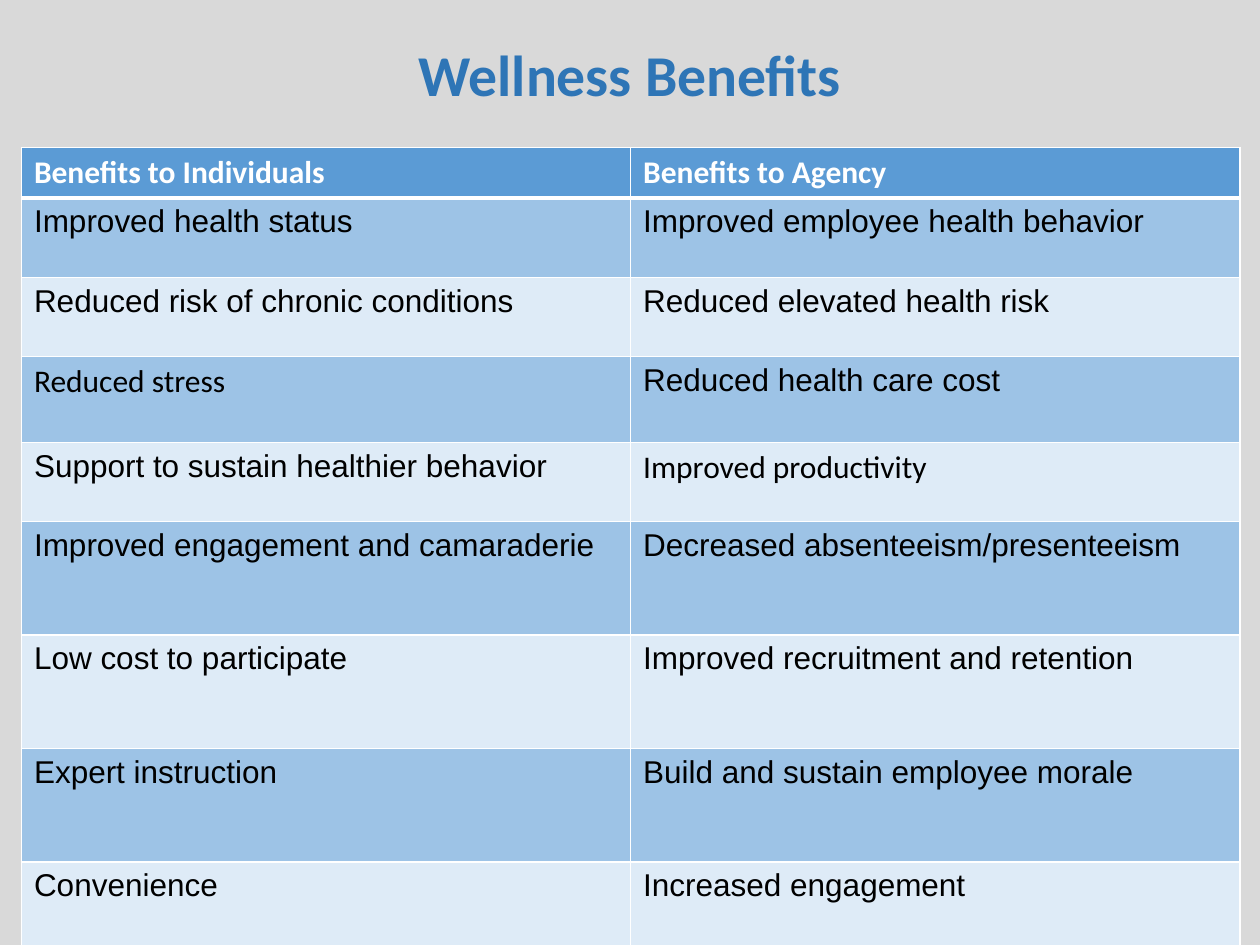
import lxml.etree
import pptx
import pptx.dml.color
import pptx.enum.text
import pptx.oxml.ns
import pptx.util

RGBColor = pptx.dml.color.RGBColor
GREY = RGBColor(0xD9, 0xD9, 0xD9)
TITLE_BLUE = RGBColor(0x2E, 0x75, 0xB6)
HEADER_BLUE = RGBColor(0x5B, 0x9B, 0xD5)
MID_BLUE = RGBColor(0x9D, 0xC3, 0xE6)
PALE_BLUE = RGBColor(0xDE, 0xEB, 0xF7)
WHITE = RGBColor(0xFF, 0xFF, 0xFF)
BLACK = RGBColor(0, 0, 0)

TITLE = {"name": "Calibri", "size": pptx.util.Pt(33), "bold": True}
HEADER = {"name": "Calibri", "size": pptx.util.Pt(18), "bold": True}
BODY = {"name": "Arial", "size": pptx.util.Pt(18), "bold": False}
CALIBRI_BODY = {**BODY, "name": "Calibri"}

BENEFITS = [
    ("Benefits to Individuals", "Benefits to Agency"),
    ("Improved health status", "Improved employee health behavior"),
    ("Reduced risk of chronic conditions", "Reduced elevated health risk"),
    ("Reduced stress", "Reduced health care cost"),
    ("Support to sustain healthier behavior", "Improved productivity"),
    ("Improved engagement and camaraderie", "Decreased absenteeism/presenteeism"),
    ("Low cost to participate", "Improved recruitment and retention"),
    ("Expert instruction", "Build and sustain employee morale"),
    ("Convenience", "Increased engagement"),
]
ROW_HEIGHTS = [0.4, 0.63, 0.63, 0.68, 0.63, 0.9, 0.9, 0.9, 0.72]
CALIBRI_ENTRIES = {"Reduced stress", "Improved productivity"}


class BenefitsPage:
    """Holds the style and the current slide, and adds each kind of element."""

    def __init__(self, deck):
        self.page = deck.slides.add_slide(deck.slide_layouts[6])
        fill = self.page.background.fill
        fill.solid()
        fill.fore_color.rgb = GREY

    def add_text(self, para, text, style, color):
        span = para.add_run()
        span.text = text
        for name, value in style.items():
            setattr(span.font, name, value)
        span.font.color.rgb = color

    def title(self, text, *place):
        box = self.page.shapes.add_textbox(*map(pptx.util.Inches, place))
        box.text_frame.word_wrap = True
        para = box.text_frame.paragraphs[0]
        para.alignment = pptx.enum.text.PP_ALIGN.CENTER
        para.line_spacing = 0.9
        self.add_text(para, text, TITLE, TITLE_BLUE)

    def border(self, cell, widths):
        properties = cell._tc.get_or_add_tcPr()
        for index, (side, points) in enumerate(widths.items()):
            line = lxml.etree.Element(pptx.oxml.ns.qn(f"a:ln{side}"))
            line.set("w", str(pptx.util.Pt(points)))
            fill = lxml.etree.SubElement(line, pptx.oxml.ns.qn("a:solidFill"))
            color = lxml.etree.SubElement(fill, pptx.oxml.ns.qn("a:srgbClr"))
            color.set("val", str(WHITE))
            properties.insert(index, line)

    def cell(self, cell, text, row):
        cell.fill.solid()
        if row == 0:
            cell.fill.fore_color.rgb = HEADER_BLUE
            style, color = HEADER, WHITE
        else:
            cell.fill.fore_color.rgb = MID_BLUE if row % 2 else PALE_BLUE
            style = CALIBRI_BODY if text in CALIBRI_ENTRIES else BODY
            color = BLACK
        self.add_text(cell.text_frame.paragraphs[0], text, style, color)
        self.border(cell, {"L": 1, "R": 1, "T": 3 if row == 1 else 1, "B": 3 if row == 0 else 1})

    def table(self, rows, heights, left, top, width):
        place = map(pptx.util.Inches, (left, top, width, sum(heights)))
        table = self.page.shapes.add_table(len(rows), len(rows[0]), *place).table
        for row, (texts, height) in enumerate(zip(rows, heights)):
            table.rows[row].height = pptx.util.Inches(height)
            for column, text in enumerate(texts):
                self.cell(table.cell(row, column), text, row)


def main():
    deck = pptx.Presentation()
    deck.slide_width = pptx.util.Inches(10)
    deck.slide_height = pptx.util.Inches(7.5)
    page = BenefitsPage(deck)
    page.title("Wellness Benefits", 0.5, 0.32, 9, 0.7)
    page.table(BENEFITS, ROW_HEIGHTS, 0.17, 1.17, 9.67)
    deck.save("out.pptx")


if __name__ == "__main__":
    main()
